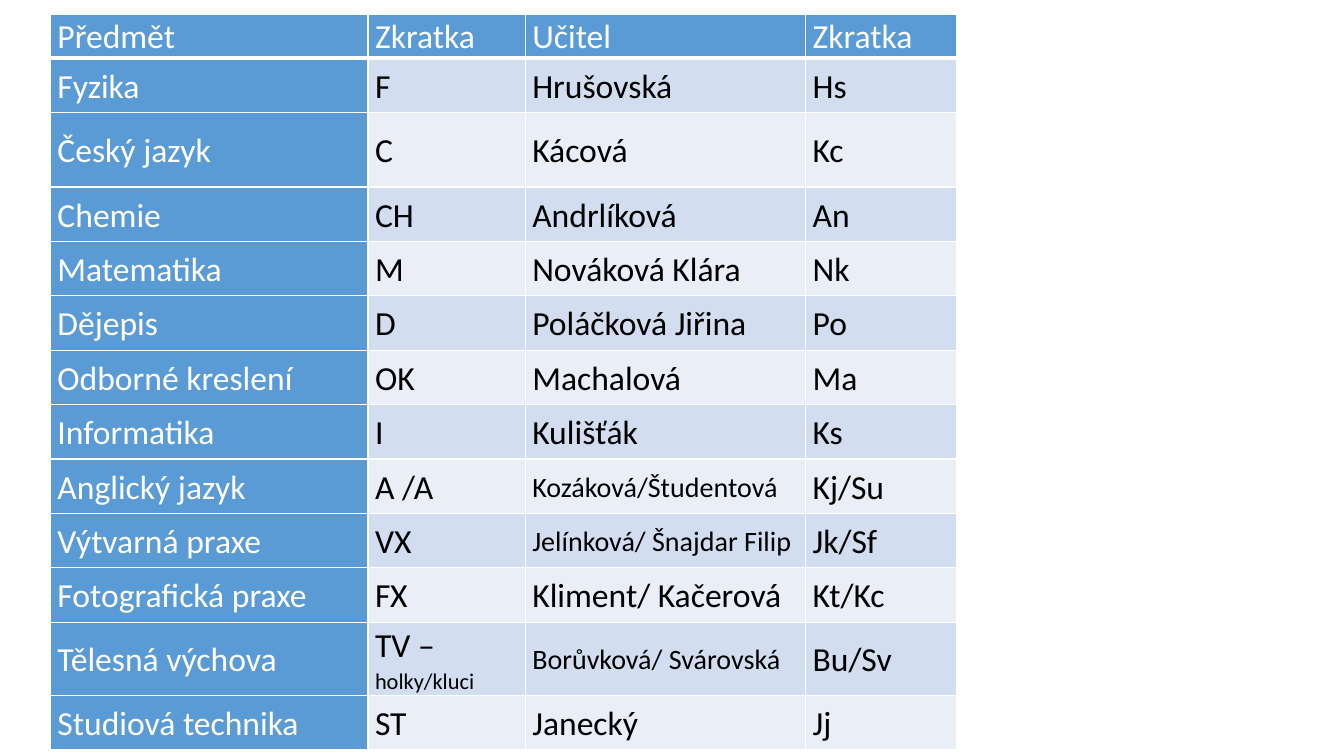
from lxml.etree import SubElement as Sub
from pptx import Presentation
from pptx.dml.color import RGBColor
from pptx.enum.text import MSO_ANCHOR as Anchor
from pptx.oxml.ns import qn
from pptx.util import Inches, Pt

WIDTHS = [3.15, 1.56, 2.78, 1.5]
HEIGHTS = [0.36, 0.54, 0.74] + [0.54] * 10
ROWS = [
    ["Předmět", "Zkratka", "Učitel", "Zkratka"],
    ["Fyzika", "F", "Hrušovská", "Hs"],
    ["Český jazyk", "C", "Kácová", "Kc"],
    ["Chemie", "CH", "Andrlíková", "An"],
    ["Matematika", "M", "Nováková Klára", "Nk"],
    ["Dějepis", "D", "Poláčková Jiřina", "Po"],
    ["Odborné kreslení", "OK", "Machalová", "Ma"],
    ["Informatika", "I", "Kulišťák", "Ks"],
    ["Anglický jazyk", "A /A", [("Kozáková/Študentová", 20)], "Kj/Su"],
    ["Výtvarná praxe", "VX", [("Jelínková/ Šnajdar Filip", 20)], "Jk/Sf"],
    ["Fotografická praxe", "FX", "Kliment/ Kačerová", "Kt/Kc"],
    ["Tělesná výchova", [("TV – ", 24), ("holky/kluci", 16)],
     [("Borůvková/ Svárovská", 20)], "Bu/Sv"],
    ["Studiová technika", "ST", "Janecký", "Jj"],
]


def color(code):
    return RGBColor.from_string(code)


class Deck:
    """Holds the table style and the current slide."""

    font, size = "Calibri", 24
    white, black, blue = "FFFFFF", "000000", "5B9BD5"
    bands = ["EAEFF7", "D2DEEF"]

    def __init__(self):
        self.prs = Presentation()
        self.prs.slide_width = Inches(13.33)
        self.prs.slide_height = Inches(7.5)
        self.slide = self.prs.slides.add_slide(self.prs.slide_layouts[6])

    def border(self, cell, side, width):
        line = Sub(cell._tc.get_or_add_tcPr(), qn(f"a:ln{side}"), w=str(Pt(width)))
        Sub(Sub(line, qn("a:solidFill")), qn("a:srgbClr"), val=self.white)

    def text(self, cell, text, ink):
        par = cell.text_frame.paragraphs[0]
        par.line_spacing = 1.07
        par.space_after = Pt(8)
        runs = [(text, self.size)] if isinstance(text, str) else text
        for words, size in runs:
            run = par.add_run()
            run.text = words
            run.font.name = self.font
            run.font.size = Pt(size)
            run.font.bold = False
            run.font.color.rgb = color(ink)

    def cell(self, cell, text, row, col):
        head = row == 0 or col == 0
        cell.vertical_anchor = Anchor.MIDDLE
        cell.margin_left = cell.margin_right = Inches(0.07)
        cell.margin_top = cell.margin_bottom = 0
        for side in "LRTB":
            self.border(cell, side, 3 if row == 0 and side == "B" else 1)
        cell.fill.solid()
        cell.fill.fore_color.rgb = color(self.blue if head else self.bands[row % 2])
        self.text(cell, text, self.white if head else self.black)

    def table(self, left, top, widths, heights, rows):
        frame = self.slide.shapes.add_table(
            len(rows), len(widths), Inches(left), Inches(top),
            Inches(sum(widths)), Inches(sum(heights)))
        table = frame.table
        table.first_col = True
        for col, width in zip(table.columns, widths):
            col.width = Inches(width)
        for row, height in zip(table.rows, heights):
            row.height = Inches(height)
        for r, row in enumerate(rows):
            for c, text in enumerate(row):
                self.cell(table.cell(r, c), text, r, c)


def main():
    deck = Deck()
    deck.table(0.5, 0.14, WIDTHS, HEIGHTS, ROWS)
    deck.prs.save("out.pptx")


if __name__ == "__main__":
    main()
